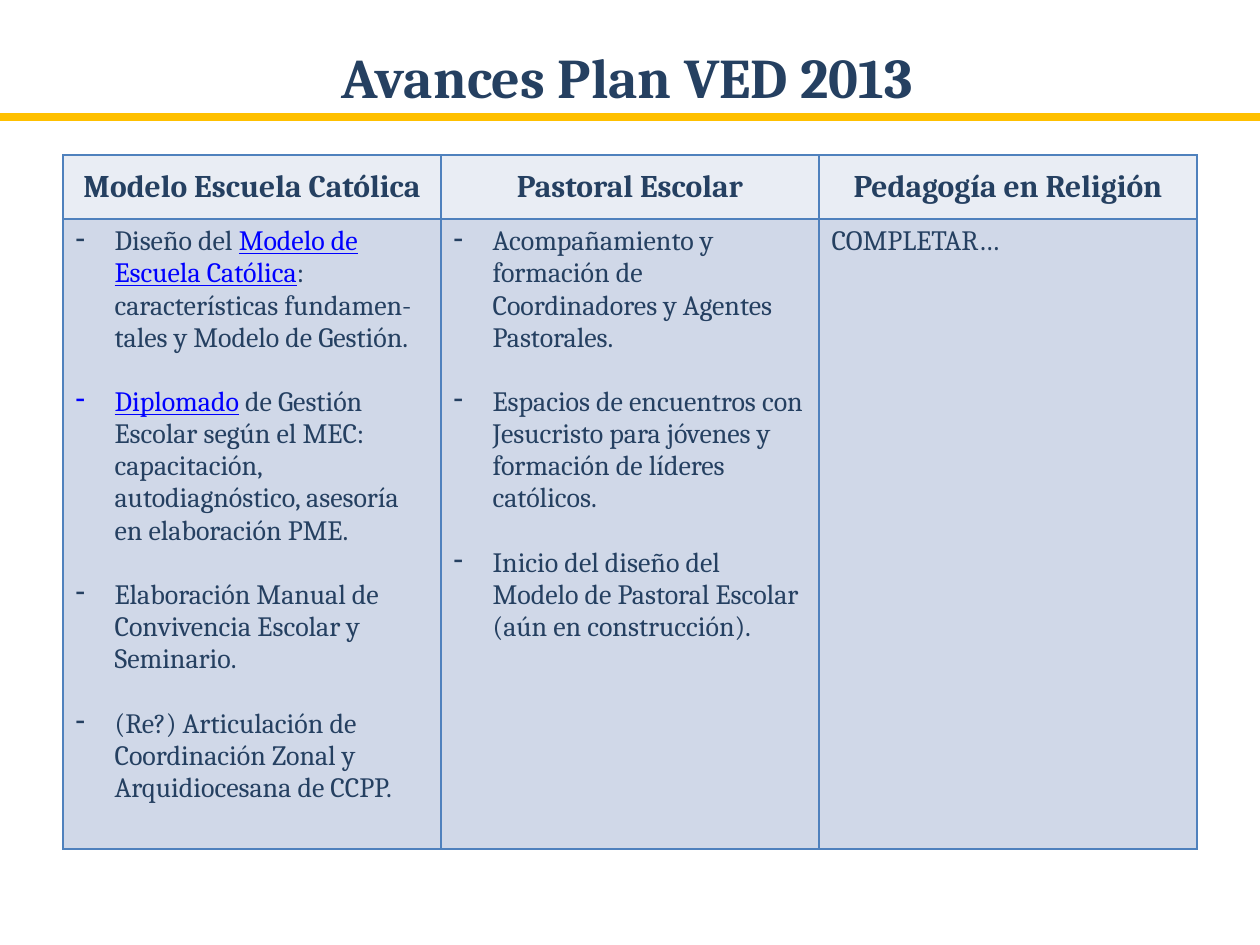
from dataclasses import dataclass

from lxml.etree import SubElement
from pptx import Presentation
from pptx.dml.color import RGBColor
from pptx.enum.shapes import MSO_CONNECTOR as Connector
from pptx.enum.text import MSO_ANCHOR as Anchor, PP_ALIGN as Align
from pptx.oxml.ns import qn
from pptx.slide import Slide
from pptx.table import _Cell as Cell
from pptx.text.text import _Paragraph as Paragraph
from pptx.util import Inches, Pt

COLORS = {
    "text": "254061",
    "link": "0000FF",
    "header": "E9EDF4",
    "body": "D0D8E8",
    "border": "4F81BD",
    "rule": "FFC000",
}
FORMATS = {
    "title": {"name": "Cambria", "size": Pt(32), "bold": True},
    "header": {"name": "Cambria", "size": Pt(18), "bold": True},
    "body": {"name": "Cambria", "size": Pt(16), "bold": False},
    "link": {"name": "Cambria", "size": Pt(16), "bold": False, "underline": True},
}
ITEM_GAP = Pt(18.4)
BULLET_INDENT = Inches(0.31)


@dataclass(frozen=True)
class Item:
    text: str
    linked: str = ""
    lead: str = ""


@dataclass(frozen=True)
class Column:
    heading: str
    items: tuple[Item, ...]
    bulleted: bool = True


COLUMNS = (
    Column("Modelo Escuela Católica", (
        Item(": características fundamen-tales y Modelo de Gestión.",
             "Modelo de Escuela Católica", "Diseño del "),
        Item(" de Gestión Escolar según el MEC: capacitación, autodiagnóstico, "
             "asesoría en elaboración PME.", "Diplomado"),
        Item("Elaboración Manual de Convivencia Escolar y Seminario."),
        Item("(Re?) Articulación de Coordinación Zonal y Arquidiocesana de CCPP."),
    )),
    Column("Pastoral Escolar", (
        Item("Acompañamiento y formación de Coordinadores y Agentes Pastorales."),
        Item("Espacios de encuentros con Jesucristo para jóvenes y formación "
             "de líderes católicos."),
        Item("Inicio del diseño del Modelo de Pastoral Escolar (aún en construcción)."),
    )),
    Column("Pedagogía en Religión", (Item("COMPLETAR…"),), bulleted=False),
)


def rgb(color: str) -> RGBColor:
    return RGBColor.from_string(COLORS[color])


def add_run(paragraph: Paragraph, text: str, style: str, color: str = "text") -> None:
    run = paragraph.add_run()
    run.text = text
    for name, value in FORMATS[style].items():
        setattr(run.font, name, value)
    run.font.color.rgb = rgb(color)


def add_bullet(paragraph: Paragraph) -> None:
    properties = paragraph._p.get_or_add_pPr()
    properties.set("marL", str(BULLET_INDENT))
    properties.set("indent", str(-BULLET_INDENT))
    SubElement(properties, qn("a:buChar"), char="-")


def style_cell(cell: Cell, fill: str) -> None:
    properties = cell._tc.get_or_add_tcPr()
    for side in ("lnL", "lnR", "lnT", "lnB"):
        border = SubElement(properties, qn(f"a:{side}"), w=str(Pt(1)))
        solid = SubElement(border, qn("a:solidFill"))
        SubElement(solid, qn("a:srgbClr"), val=COLORS["border"])
    cell.fill.solid()
    cell.fill.fore_color.rgb = rgb(fill)


def fill_header(cell: Cell, heading: str) -> None:
    style_cell(cell, "header")
    cell.vertical_anchor = Anchor.MIDDLE
    paragraph = cell.text_frame.paragraphs[0]
    paragraph.alignment = Align.CENTER
    add_run(paragraph, heading, "header")


def fill_body(cell: Cell, column: Column) -> None:
    style_cell(cell, "body")
    frame = cell.text_frame
    for index, item in enumerate(column.items):
        paragraph = frame.add_paragraph() if index else frame.paragraphs[0]
        if index:
            paragraph.space_before = ITEM_GAP
        if column.bulleted:
            add_bullet(paragraph)
        if item.lead:
            add_run(paragraph, item.lead, "body")
        if item.linked:
            add_run(paragraph, item.linked, "link", "link")
        add_run(paragraph, item.text, "body")


def add_plan_table(slide: Slide) -> None:
    table = slide.shapes.add_table(
        2, len(COLUMNS), Inches(0.5), Inches(1.23), Inches(9), Inches(5.51)
    ).table
    for row, height in zip(table.rows, (0.51, 5)):
        row.height = Inches(height)
    for index, column in enumerate(COLUMNS):
        fill_header(table.cell(0, index), column.heading)
        fill_body(table.cell(1, index), column)


def add_rule(slide: Slide) -> None:
    rule = slide.shapes.add_connector(
        Connector.STRAIGHT, Inches(0), Inches(0.93), Inches(10), Inches(0.93)
    )
    rule.line.color.rgb = rgb("rule")
    rule.line.width = Pt(4.5)
    SubElement(rule._element.spPr, qn("a:effectLst"))


def add_title(slide: Slide, text: str) -> None:
    box = slide.shapes.add_textbox(Inches(0.28), Inches(0.29), Inches(9.4), Inches(0.64))
    box.text_frame.word_wrap = True
    paragraph = box.text_frame.paragraphs[0]
    paragraph.alignment = Align.CENTER
    add_run(paragraph, text, "title")


def main() -> None:
    presentation = Presentation()
    presentation.slide_width = Inches(10)
    presentation.slide_height = Inches(7.5)
    slide = presentation.slides.add_slide(presentation.slide_layouts[6])
    add_plan_table(slide)
    add_rule(slide)
    add_title(slide, "Avances Plan VED 2013")
    presentation.save("out.pptx")


if __name__ == "__main__":
    main()
